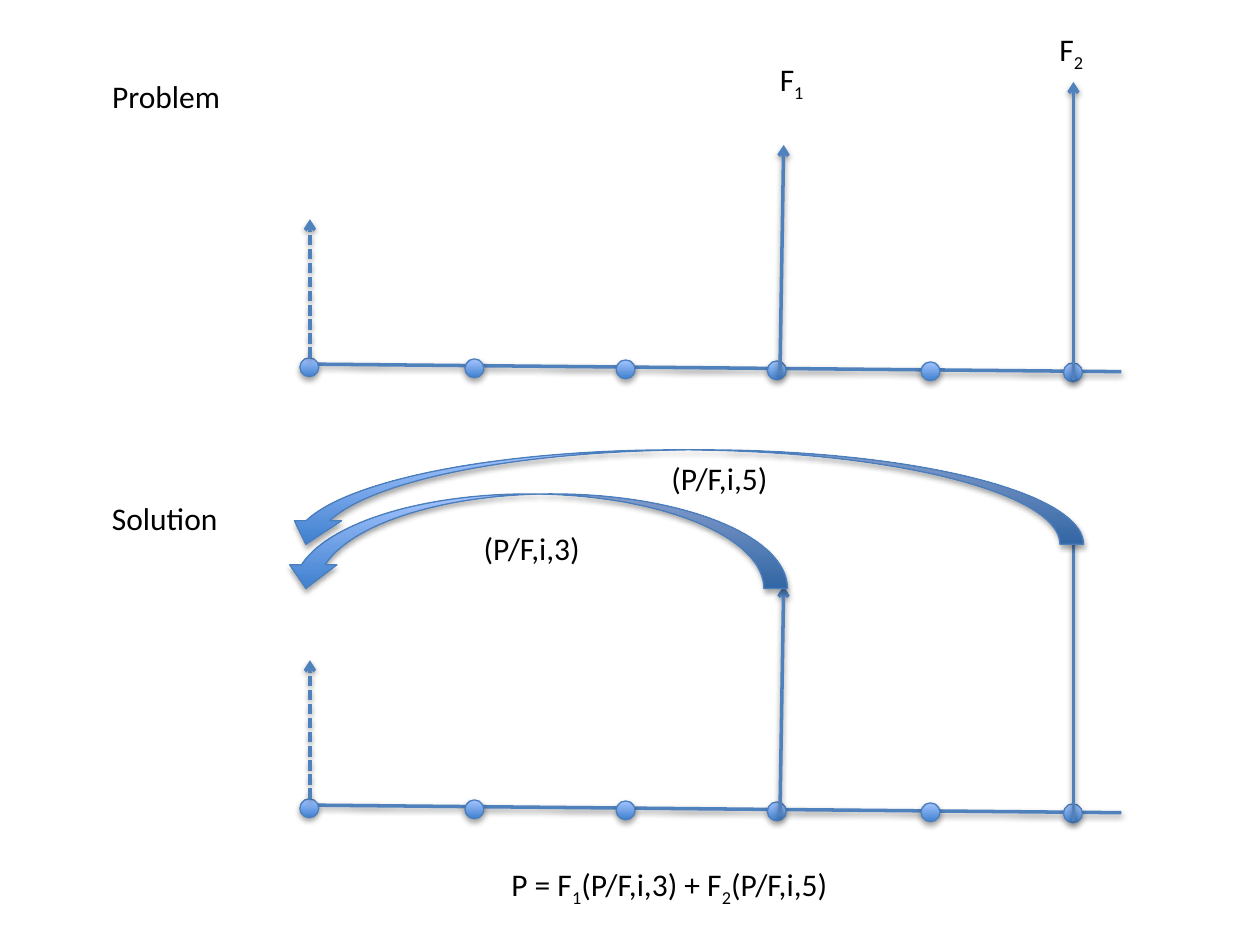
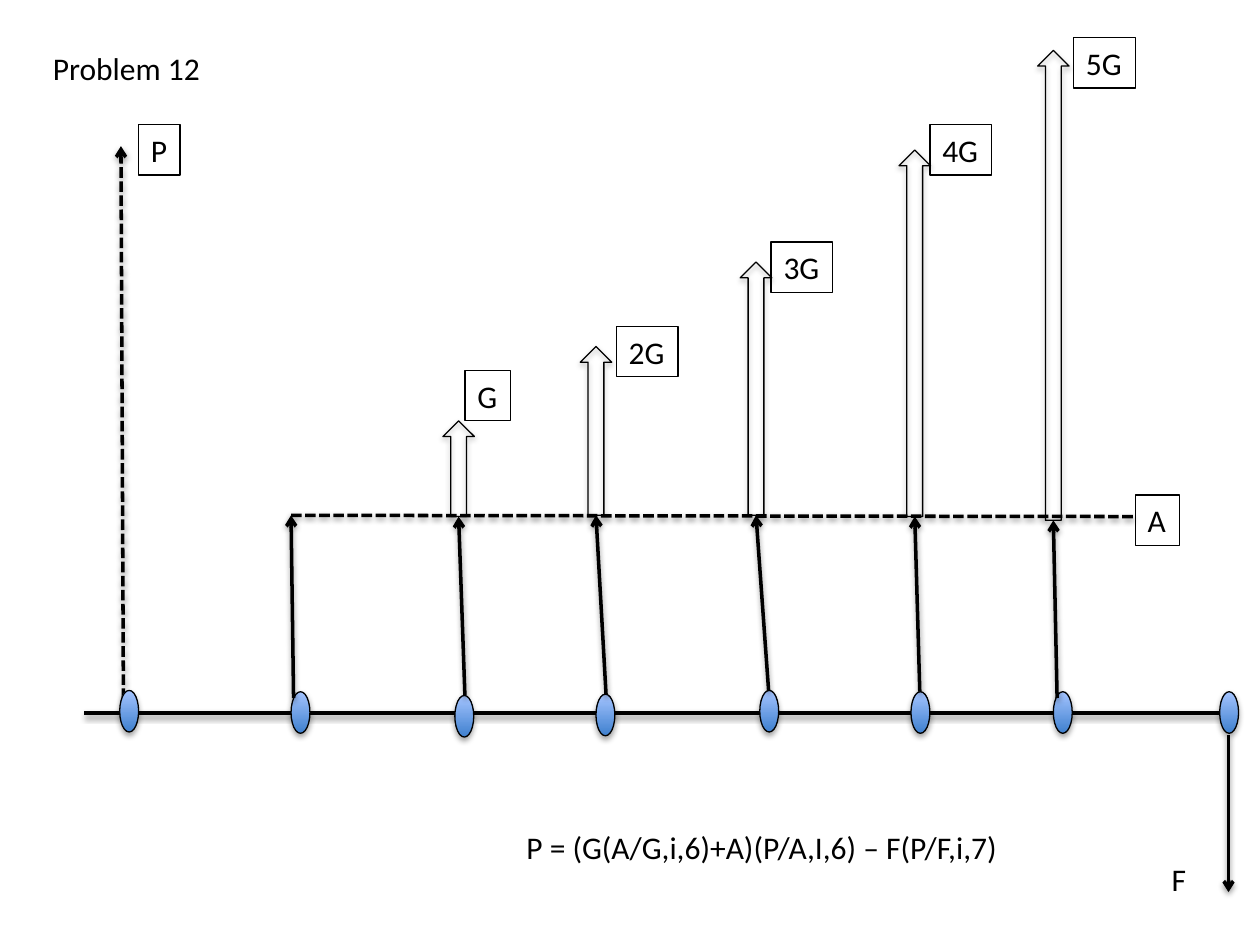
from dataclasses import dataclass

from lxml import etree
from pptx import Presentation
from pptx.dml.color import RGBColor
from pptx.enum import dml, shapes, text
from pptx.oxml.ns import qn
from pptx.util import Inches, Pt


@dataclass(frozen=True)
class Theme:
    font: str = "Calibri"
    size: int = 18
    ink: str = "000000"
    axis: str = "4F81BD"
    outline: str = "4B7EBC"
    shade: str = "3F80CE"
    tint: str = "A4C4FF"
    thick: float = 2
    thin: float = 0.75


THEME = Theme()
LABEL_HEIGHT = 0.4
NODE_WIDTH = 0.15


def colour(code):
    return RGBColor.from_string(code)


def add_shadow(item, distance, opacity):
    """Give a shape or connector a soft shadow straight below it."""
    properties = item.element.spPr
    effects = etree.SubElement(properties, qn("a:effectLst"))
    shadow = etree.SubElement(
        effects, qn("a:outerShdw"), blurRad="40000", dist=str(distance),
        dir="5400000", rotWithShape="0")
    black = etree.SubElement(shadow, qn("a:srgbClr"), val=THEME.ink)
    etree.SubElement(black, qn("a:alpha"), val=str(opacity * 1000))


def write(frame, words, size=THEME.size, ink=THEME.ink):
    """Fill a text frame; the character after each underscore is a subscript."""
    frame.word_wrap = False
    frame.auto_size = text.MSO_AUTO_SIZE.SHAPE_TO_FIT_TEXT
    frame.vertical_anchor = text.MSO_ANCHOR.TOP
    para = frame.paragraphs[0]
    para.alignment = text.PP_ALIGN.LEFT
    first, *rest = words.split("_")
    pieces = [(first, False)]
    for piece in rest:
        pieces += [(piece[0], True), (piece[1:], False)]
    for piece, lowered in pieces:
        if not piece:
            continue
        span = para.add_run()
        span.text = piece
        span.font.name = THEME.font
        span.font.size = Pt(size)
        span.font.color.rgb = colour(ink)
        if lowered:
            span.font._element.set("baseline", "-25000")


class Region:
    """A part of a page; its contents are placed from its top left corner."""

    def __init__(self, page, left, top):
        self.page, self.left, self.top = page, left, top

    def place(self, x, y):
        return Inches(self.left + x), Inches(self.top + y)

    def title(self, words, x, y, width):
        box = self.page.shapes.title
        box.left, box.top = self.place(x, y)
        box.width, box.height = Inches(width), Inches(LABEL_HEIGHT)
        write(box.text_frame, words)

    def label(self, words, x, y, width, framed=False):
        box = self.page.shapes.add_textbox(
            *self.place(x, y), Inches(width), Inches(LABEL_HEIGHT))
        write(box.text_frame, words)
        if framed:
            box.line.color.rgb = colour(THEME.ink)
            box.line.width = Pt(THEME.thin)

    def line(self, start, end, ink=THEME.ink, dashed=False, arrow=True):
        line = self.page.shapes.add_connector(
            shapes.MSO_CONNECTOR.STRAIGHT, *self.place(*start), *self.place(*end))
        line.line.color.rgb = colour(ink)
        line.line.width = Pt(THEME.thick)
        if dashed:
            line.line.dash_style = dml.MSO_LINE.SQUARE_DOT
        if arrow:
            etree.SubElement(line.line._get_or_add_ln(), qn("a:tailEnd"), type="arrow")
        add_shadow(line, 20000, 38)

    def shape(self, kind, x, y, width, height, ink=THEME.ink, filled=True, flipped=False):
        shape = self.page.shapes.add_shape(
            kind, *self.place(x, y), Inches(width), Inches(height))
        if filled:
            shape.fill.gradient()
            shape.fill.gradient_angle = 90
            for stop, code in zip(shape.fill.gradient_stops, (THEME.shade, THEME.tint)):
                stop.color.rgb = colour(code)
        else:
            shape.fill.background()
        shape.line.color.rgb = colour(ink)
        shape.line.width = Pt(THEME.thin)
        if flipped:
            shape.element.spPr.xfrm.set("flipH", "1")
        add_shadow(shape, 23000, 35)


def draw_timeline(region):
    """Draw a slightly sloping axis with six periods, P, F1 and F2."""
    region.line((0.08, 2.24), (6.52, 2.3), ink=THEME.axis, arrow=False)
    for x in (0, 1.31, 2.51, 3.71, 4.93, 6.06):
        region.shape(shapes.MSO_SHAPE.OVAL, x, 2.19 + 0.04 * x / 6.06,
                     NODE_WIDTH, NODE_WIDTH, ink=THEME.outline)
    region.line((0.08, 2.19), (0.08, 1.09), ink=THEME.axis, dashed=True)
    region.line((3.81, 2.33), (3.84, 0.5), ink=THEME.axis)
    region.line((6.14, 2.37), (6.14, 0), ink=THEME.axis)


def draw_problem(region):
    region.title("Problem", -1.59, -0.09, 1.07)
    draw_timeline(region)
    region.label("F_1", 3.71, -0.22, 0.42)
    region.label("F_2", 5.93, -0.46, 0.42)


def draw_solution(region):
    region.label("Solution", -1.59, -0.24, 1.05)
    draw_timeline(region)
    for y, width in ((-0.23, 4.01), (-0.58, 6.36)):
        region.shape(shapes.MSO_SHAPE.CURVED_DOWN_ARROW, -0.14, y, width, 0.75,
                     ink=THEME.outline, flipped=True)
    region.label("(P/F,i,3)", 1.36, 0, 1.01)
    region.label("(P/F,i,5)", 2.85, -0.56, 1.01)
    region.label("P = F_1(P/F,i,3) + F_2(P/F,i,5)", 1.58, 2.67, 2.92)


def draw_gradient_series(region):
    """Draw the base amounts A and, on top of them, the growing amounts of G."""
    nodes = ((0.28, 5.18), (1.64, 5.19), (2.94, 5.22), (4.06, 5.21),
             (5.36, 5.18), (6.56, 5.19), (7.69, 5.19), (9.01, 5.19))
    base_arrows = (
        ((1.66, 5.24), (1.64, 3.79)), ((3.02, 5.22), (2.97, 3.8)),
        ((4.14, 5.21), (4.06, 3.79)), ((5.43, 5.18), (5.33, 3.79)),
        ((6.63, 5.19), (6.59, 3.8)), ((7.72, 5.24), (7.69, 3.83)))
    # Top of the block arrow, then label text, left, top and width
    increments = (
        (3.04, "G", 3.02, 2.64, 0.36), (2.45, "2G", 4.22, 2.29, 0.49),
        (1.78, "3G", 5.45, 1.62, 0.49), (0.89, "4G", 6.71, 0.69, 0.49),
        (0.1, "5G", 7.85, 0, 0.49))
    block_width = 0.25

    region.line((0, 5.36), (9.08, 5.36), arrow=False)
    region.line((0.31, 5.36), (0.29, 0.86), dashed=True)
    for x, y in nodes:
        region.shape(shapes.MSO_SHAPE.OVAL, x, y, NODE_WIDTH, 0.33)
    for (_, (x, base)), (top, words, *spot) in zip(base_arrows[1:], increments):
        region.shape(shapes.MSO_SHAPE.UP_ARROW, x - block_width / 2, top,
                     block_width, base - top, filled=False)
        region.label(words, *spot, framed=True)
    region.line((1.64, 3.79), (8.34, 3.8), dashed=True, arrow=False)
    for foot, tip in base_arrows:
        region.line(foot, tip)
    region.line((9.08, 5.53), (9.08, 6.78))
    region.label("P", 0.43, 0.69, 0.33, framed=True)
    region.label("A", 8.34, 3.63, 0.35, framed=True)
    region.label("F", 8.53, 6.48, 0.32)


def add_page(deck):
    return deck.slides.add_slide(deck.slide_layouts.get_by_name("Title Only"))


def add_present_worth_page(deck):
    page = add_page(deck)
    draw_problem(Region(page, 2.38, 0.65))
    draw_solution(Region(page, 2.38, 4.15))


def add_gradient_page(deck):
    region = Region(add_page(deck), 0.67, 0.3)
    region.title("Problem 12", -0.35, 0.04, 1.38)
    draw_gradient_series(region)
    region.label("P = (G(A/G,i,6)+A)(P/A,I,6) – F(P/F,i,7)", 3.41, 6.22, 4.04)


def main():
    deck = Presentation()
    deck.slide_width, deck.slide_height = Inches(10), Inches(7.5)
    add_present_worth_page(deck)
    add_gradient_page(deck)
    deck.save("out.pptx")


if __name__ == "__main__":
    main()
